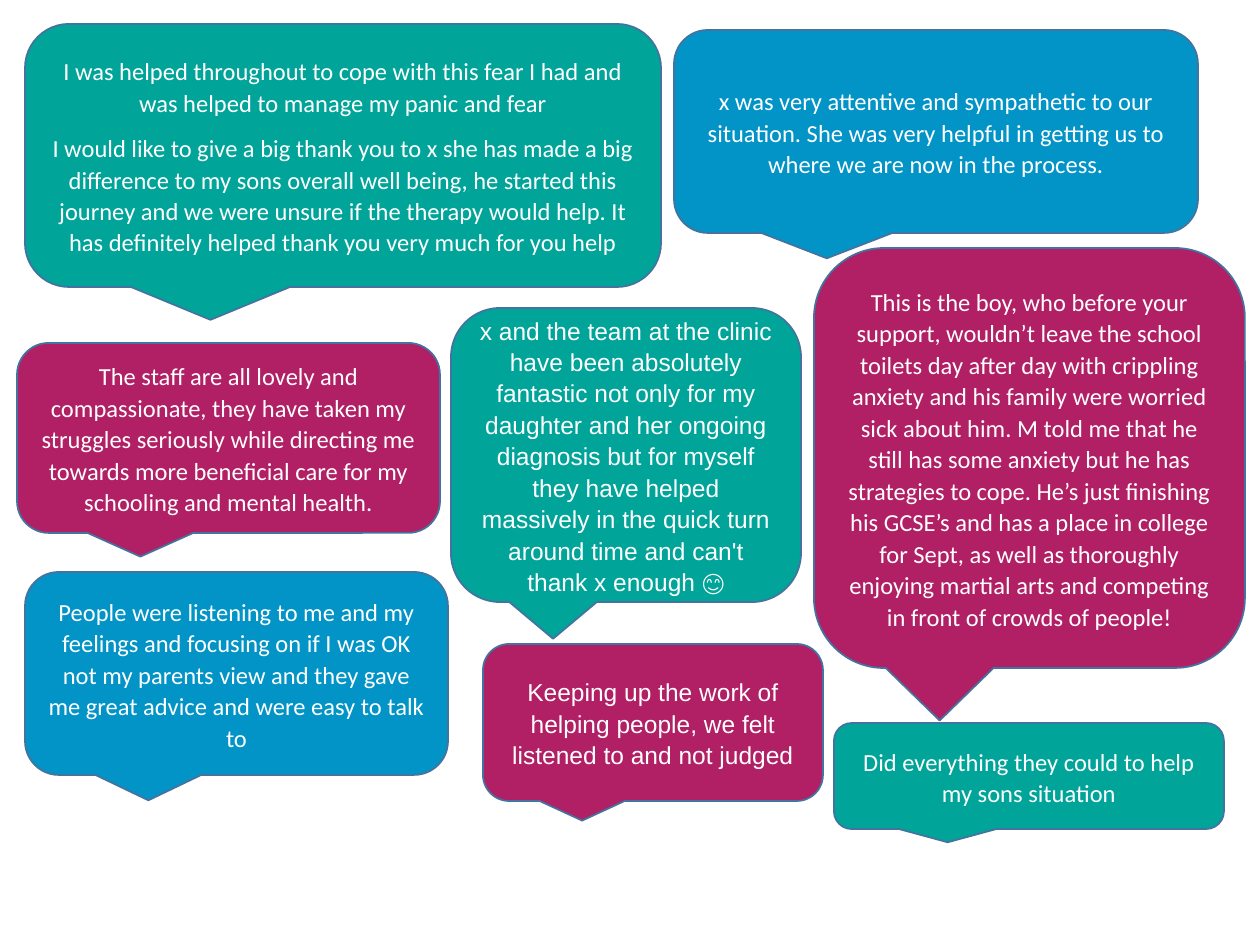
from pptx import Presentation
from pptx.dml.color import RGBColor
from pptx.enum.shapes import MSO_SHAPE as Shape
from pptx.enum.text import MSO_ANCHOR as Anchor, PP_ALIGN as Align
from pptx.util import Emu, Pt

PX = 914400 / 126
WIDTH, HEIGHT = 1260, 945
BLANK_LAYOUT = 6

TEAL = RGBColor(0x00, 0xA4, 0x99)
BLUE = RGBColor(0x02, 0x94, 0xC7)
PLUM = RGBColor(0xB1, 0x1F, 0x65)
OUTLINE = RGBColor(0x43, 0x73, 0x9E)
WHITE = RGBColor(0xFF, 0xFF, 0xFF)

PARAGRAPH_FORMAT = {"alignment": Align.CENTER, "line_spacing": 1.07, "space_after": Pt(8)}

# Each quote: (left, top, width, height) in px, fill, paragraphs of (text, font) spans.
QUOTES = [
    ((25, 24, 636, 263), TEAL, [
        [("I was helped throughout to cope with this fear I had and was helped "
          "to manage my panic and fear", "Calibri")],
        [("I would like to give a big thank you to x she has made a big difference "
          "to my sons overall well being, he started this journey and we were unsure "
          "if the therapy would help. It has definitely helped thank you very much "
          "for you help", "Calibri")]]),
    ((814, 248, 431, 420), PLUM, [
        [("This is the boy, who before your support, wouldn’t leave the school toilets "
          "day after day with crippling anxiety and his family were worried sick about "
          "him. M told me that he still has some anxiety but he has strategies to cope. "
          "He’s just finishing his GCSE’s and has a place in college for Sept, as well "
          "as thoroughly enjoying martial arts and competing in front of crowds of "
          "people!", "Calibri")]]),
    ((674, 30, 524, 203), BLUE, [
        [("x was very attentive and sympathetic to our situation. She was very helpful "
          "in getting us to where we are now in the process.", "Calibri")]]),
    ((17, 343, 423, 190), PLUM, [
        [("The staff are all lovely and compassionate, they have taken my struggles "
          "seriously while directing me towards more beneficial care for my schooling "
          "and mental health.", "Calibri")]]),
    ((25, 572, 423, 203), BLUE, [
        [("People were listening to me and my feelings and focusing on if I was OK not "
          "my parents view and they gave me great advice and were easy to talk to",
          "Calibri")]]),
    ((451, 308, 350, 294), TEAL, [
        [("x and the team at the clinic have been absolutely fantastic not only for my "
          "daughter and her ongoing diagnosis but for myself they have helped massively "
          "in the quick turn around time and can't thank x enough ", "Arial"),
         ("😊", "Lato")]]),
    ((834, 723, 390, 106), TEAL, [
        [("Did everything they could to help my sons situation", "Calibri")]]),
    ((483, 644, 340, 157), PLUM, [
        [("Keeping up the work of helping people, we felt listened to and not judged",
          "Arial")]]),
]


def px(length):
    return Emu(round(length * PX))


def apply_format(target, values):
    for name, value in values.items():
        setattr(target, name, value)


def add_span(para, text, font):
    span = para.add_run()
    span.text = text
    apply_format(span.font, {"name": font, "size": Pt(14)})
    span.font.color.rgb = WHITE


def add_bubble(page, bounds, fill, paragraphs):
    """Add a speech bubble holding centred quote paragraphs."""
    bubble = page.shapes.add_shape(Shape.ROUNDED_RECTANGULAR_CALLOUT, *map(px, bounds))
    bubble.shadow.inherit = False
    bubble.fill.solid()
    bubble.fill.fore_color.rgb = fill
    bubble.line.color.rgb = OUTLINE
    bubble.line.width = Pt(1)
    box = bubble.text_frame
    apply_format(box, {"word_wrap": True, "vertical_anchor": Anchor.MIDDLE})
    for index, spans in enumerate(paragraphs):
        para = box.add_paragraph() if index else box.paragraphs[0]
        apply_format(para, PARAGRAPH_FORMAT)
        for text, font in spans:
            add_span(para, text, font)


def main():
    deck = Presentation()
    apply_format(deck, {"slide_width": px(WIDTH), "slide_height": px(HEIGHT)})
    page = deck.slides.add_slide(deck.slide_layouts[BLANK_LAYOUT])
    for bounds, fill, paragraphs in QUOTES:
        add_bubble(page, bounds, fill, paragraphs)
    deck.save("out.pptx")


if __name__ == "__main__":
    main()
